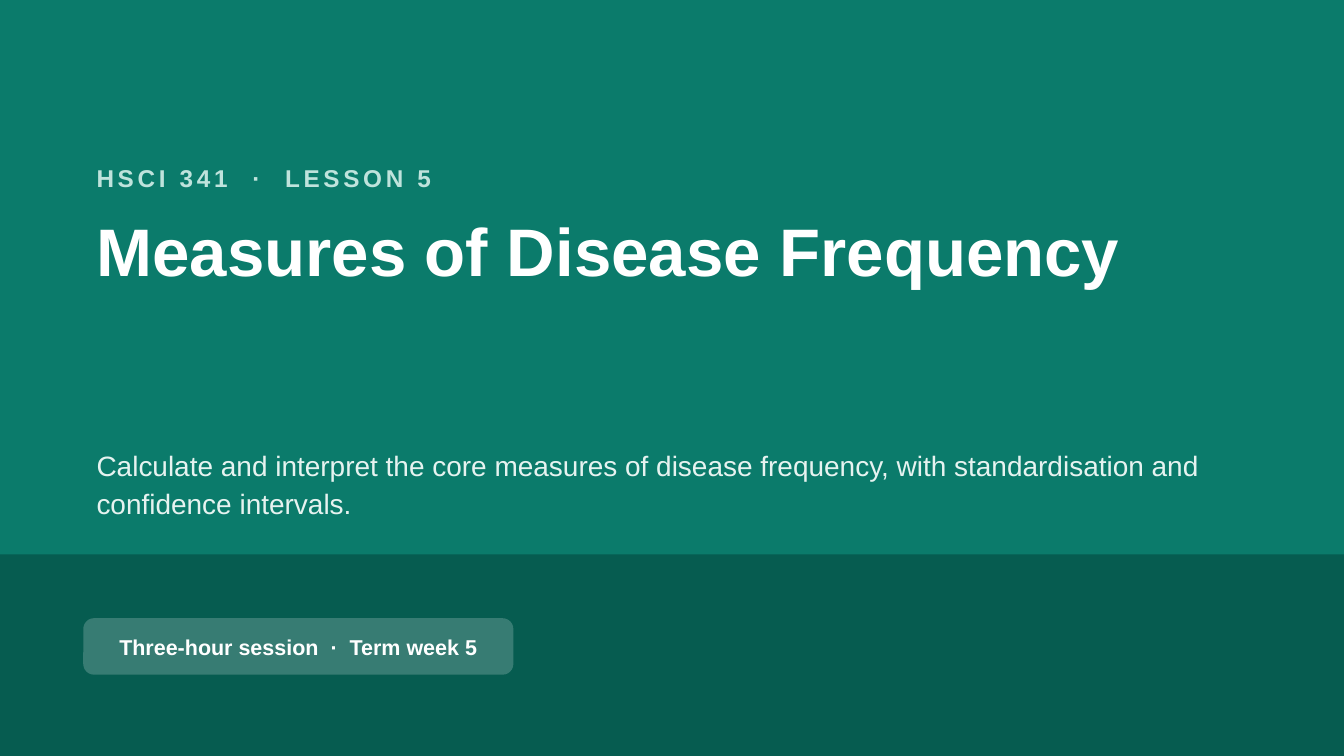
from dataclasses import dataclass

from lxml import etree
from pptx import Presentation
from pptx import util as u
from pptx.dml.color import RGBColor
from pptx.enum import shapes, text
from pptx.oxml.ns import qn

EMU_PER_PX = 4572  # 200 px to the inch
PAGE_WIDTH, PAGE_HEIGHT = 2000, 1125
MARGIN = 124
BAND_HEIGHT = 300
FONT = "Arial"
COLORS = {
    "background": "0B7B6B",
    "band": "065C50",
    "course": "BFE3DC",
    "summary": "E6F3F0",
    "white": "FFFFFF",
}


@dataclass(frozen=True)
class Box:
    left: int
    top: int
    width: int
    height: int

    def emu(self) -> list[u.Emu]:
        sides = (self.left, self.top, self.width, self.height)
        return [u.Emu(side * EMU_PER_PX) for side in sides]


@dataclass(frozen=True)
class Label:
    words: str
    size: float
    color: str
    bold: bool = False
    line_spacing: float | None = None
    letter_spacing: int = 0
    anchor: text.MSO_ANCHOR = text.MSO_ANCHOR.TOP
    align: text.PP_ALIGN = text.PP_ALIGN.LEFT


HEADINGS = [
    (Box(MARGIN, 224, 1780, 80),
     Label("HSCI 341  ·  LESSON 5", 13, "course", bold=True,
           letter_spacing=2, anchor=text.MSO_ANCHOR.MIDDLE)),
    (Box(MARGIN, 300, 1780, 310),
     Label("Measures of Disease Frequency", 36, "white", bold=True,
           line_spacing=1.02)),
    (Box(MARGIN, 650, 1780, 160),
     Label("Calculate and interpret the core measures of disease frequency, "
           "with standardisation and confidence intervals.", 15, "summary",
           line_spacing=1.15)),
]
BADGE_BOX = Box(MARGIN, 920, 640, 84)
BADGE = Label("Three-hour session  ·  Term week 5", 11.5, "white", bold=True,
              anchor=text.MSO_ANCHOR.MIDDLE, align=text.PP_ALIGN.CENTER)


def rgb(name: str) -> RGBColor:
    return RGBColor.from_string(COLORS[name])


def write_label(shape, label: Label) -> None:
    frame = shape.text_frame
    frame.word_wrap = True
    frame.vertical_anchor = label.anchor
    para = frame.paragraphs[0]
    para.alignment = label.align
    if label.line_spacing:
        para.line_spacing = label.line_spacing
    para.font.name = FONT
    para.font.size = u.Pt(label.size)
    para.font.bold = label.bold
    para.font.color.rgb = rgb(label.color)
    span = para.add_run()
    span.text = label.words
    if label.letter_spacing:
        span._r.get_or_add_rPr().set("spc", str(label.letter_spacing * 100))


def add_panel(page, kind: shapes.MSO_SHAPE, box: Box, color: str,
              opacity: int = 100):
    """Add a borderless filled shape; opacity is in percent."""
    panel = page.shapes.add_shape(kind, *box.emu())
    panel.shadow.inherit = False
    panel.line.fill.background()
    panel.fill.solid()
    panel.fill.fore_color.rgb = rgb(color)
    if opacity < 100:
        shade = panel._element.spPr.find(f"{qn('a:solidFill')}/{qn('a:srgbClr')}")
        etree.SubElement(shade, qn("a:alpha"), val=str(opacity * 1000))
    return panel


def main() -> None:
    deck = Presentation()
    deck.slide_width = u.Emu(PAGE_WIDTH * EMU_PER_PX)
    deck.slide_height = u.Emu(PAGE_HEIGHT * EMU_PER_PX)
    page = deck.slides.add_slide(deck.slide_layouts[6])
    page.background.fill.solid()
    page.background.fill.fore_color.rgb = rgb("background")

    band = Box(0, PAGE_HEIGHT - BAND_HEIGHT, PAGE_WIDTH, BAND_HEIGHT)
    add_panel(page, shapes.MSO_SHAPE.RECTANGLE, band, "band")
    for box, label in HEADINGS:
        write_label(page.shapes.add_textbox(*box.emu()), label)

    badge = add_panel(page, shapes.MSO_SHAPE.ROUNDED_RECTANGLE, BADGE_BOX,
                      "white", opacity=20)
    badge.adjustments[0] = 0.19
    write_label(badge, BADGE)
    deck.save("out.pptx")


if __name__ == "__main__":
    main()
